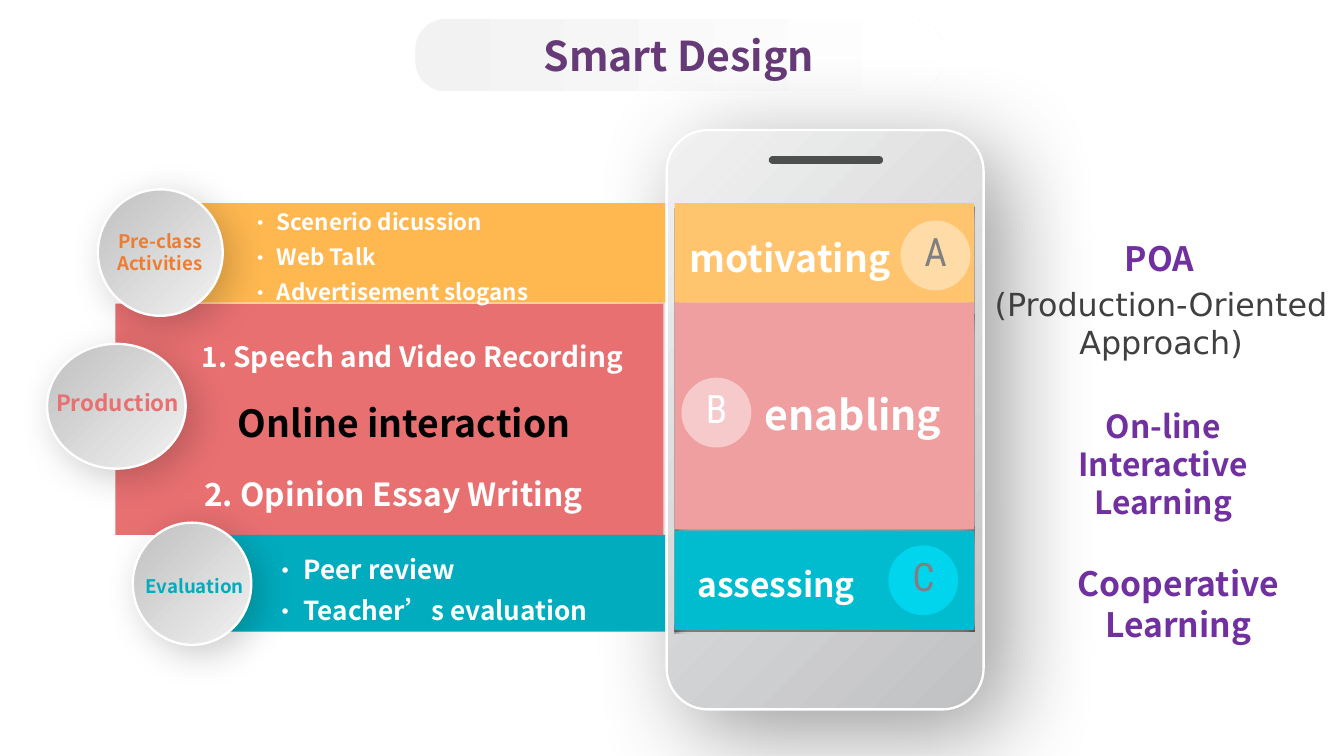
from lxml import etree
from pptx import Presentation
from pptx.dml.color import RGBColor
from pptx.enum.shapes import MSO_SHAPE
from pptx.enum.text import MSO_ANCHOR, MSO_AUTO_SIZE, PP_ALIGN
from pptx.oxml.ns import qn
from pptx.util import Cm, Pt

RECT, ROUND, OVAL = MSO_SHAPE.RECTANGLE, MSO_SHAPE.ROUNDED_RECTANGLE, MSO_SHAPE.OVAL
LEFT, CENTER, JUSTIFY = PP_ALIGN.LEFT, PP_ALIGN.CENTER, PP_ALIGN.JUSTIFY
MIDDLE, FIXED_SIZE = MSO_ANCHOR.MIDDLE, MSO_AUTO_SIZE.NONE
SANS, CONDENSED, PLAIN = "Noto Sans CJK SC", "Roboto Condensed", "DejaVu Sans"
COLORS = {
    "white": "FFFFFF", "black": "000000", "title": "663A77", "purple": "7030A0",
    "gray": "808080", "dark": "404040", "speaker": "4D4F4E", "pale": "F2F2F2",
    "silver": "BFBFBF", "phone light": "F1F1F1", "phone dark": "C0C1C3",
    "orange": "ED7D31", "yellow": "FFB850", "yellow panel": "FFC46D", "yellow badge": "FFDBA7",
    "red": "E87071", "red panel": "EF9F9F", "red badge": "F6CACA",
    "teal": "01ACBE", "teal panel": "01BBCF", "teal badge": "01D5ED",
}

deck = Presentation()
deck.slide_width, deck.slide_height = Cm(25.4), Cm(14.29)
page = deck.slides.add_slide(deck.slide_layouts[5])


def add_block(kind, box, fill, angle=0, line=False, shadow=None, corner=None):
    shape = page.shapes.add_shape(kind, *[Cm(value) for value in box])
    shape.shadow.inherit = False
    if corner is not None:
        shape.adjustments[0] = corner
    if isinstance(fill, str):
        shape.fill.solid()
        shape.fill.fore_color.rgb = RGBColor.from_string(COLORS[fill])
    else:
        shape.fill.background()
        properties = shape.element.spPr
        gradient = etree.Element(qn("a:gradFill"), rotWithShape="1")
        stops = etree.SubElement(gradient, qn("a:gsLst"))
        for position, color, alpha in fill:
            stop = etree.SubElement(stops, qn("a:gs"), pos=str(position * 1000))
            tone = etree.SubElement(stop, qn("a:srgbClr"), val=COLORS[color])
            etree.SubElement(tone, qn("a:alpha"), val=str(alpha * 1000))
        etree.SubElement(gradient, qn("a:lin"), ang=str(angle * 60000), scaled="0")
        properties.replace(properties.find(qn("a:noFill")), gradient)
    if line:
        shape.line.color.rgb = RGBColor.from_string(COLORS["white"])
        shape.line.width = Pt(1.25)
    else:
        shape.line.fill.background()
    if shadow:
        alpha, blur, distance = shadow
        effects = shape.element.spPr.find(qn("a:effectLst"))
        outer = etree.SubElement(effects, qn("a:outerShdw"), blurRad=str(Pt(blur)),
                                 dist=str(Pt(distance)), dir="2700000", algn="tl", rotWithShape="0")
        tone = etree.SubElement(outer, qn("a:srgbClr"), val=COLORS["black"])
        etree.SubElement(tone, qn("a:alpha"), val=str(alpha * 1000))
    return shape


def add_text(box, text, size, color, align=CENTER, font=SANS, spacing=None, indent=None, holder=None):
    holder = holder or page.shapes.add_textbox(0, 0, 0, 0)
    holder.left, holder.top, holder.width, holder.height = [Cm(value) for value in box]
    frame = holder.text_frame
    frame.text = text
    frame.word_wrap = True
    frame.auto_size = FIXED_SIZE
    for para in frame.paragraphs:
        para.alignment = align
        if spacing:
            para.line_spacing = spacing
        if indent:
            settings = para._p.get_or_add_pPr()
            settings.set("marL", str(Cm(indent)))
            settings.set("indent", str(-Cm(indent)))
            etree.SubElement(settings, qn("a:buFont"), typeface=font)
            etree.SubElement(settings, qn("a:buChar"), char="·")
        for span in para.runs:
            span.font.size = Pt(size)
            span.font.name = font
            span.font.bold = font == SANS
            span.font.color.rgb = RGBColor.from_string(COLORS[color])
            etree.SubElement(span._r.rPr, qn("a:ea"), typeface=font)


title_box = (7.85, 0.36, 9.96, 1.37)
pill = add_block(ROUND, title_box, [(0, "pale", 100), (99, "white", 100)], corner=0.42)
title = page.shapes.title
add_text(title_box, "Smart Design", 22, "title", holder=title)
title.text_frame.vertical_anchor = MIDDLE
title.element.addprevious(pill.element)

add_block(ROUND, (12.6, 2.46, 5.99, 10.95), [(0, "phone light", 100), (100, "phone dark", 100)],
          angle=45, line=True, shadow=(40, 54, 16), corner=0.13)
add_block(ROUND, (14.53, 2.95, 2.16, 0.15), "speaker", corner=0.5)

shades = [
    ((12.75, 3.94, 0.33, 8.03), 180, 34),
    ((18.08, 3.91, 0.33, 8.03), 0, 34),
    ((15.39, 1.3, 0.41, 5.66), 270, 34),
    ((15.29, 3.43, 0.61, 5.66), 270, 34),
    ((15.29, 7.42, 0.61, 5.66), 270, 34),
    ((15.42, 8.94, 0.33, 5.66), 90, 48),
]
for box, rotation, alpha in shades:
    shade = add_block(RECT, box, [(0, "pale", 0), (62, "black", 10), (100, "black", alpha)])
    shade.rotation = rotation

for top, height, color in [(3.84, 1.88, "yellow panel"), (5.72, 4.29, "red panel"),
                           (10.03, 1.88, "teal panel")]:
    add_block(RECT, (12.75, top, 5.66, height), color)

stages = [
    ((2.18, 5.74, 10.36, 4.37), "red", (0.89, 6.5, 2.62, 2.36),
     (0.74, 7.24, 2.97, 0.76), "Production", 12, "red"),
    ((3.63, 3.84, 8.94, 1.88), "yellow", (1.85, 3.58, 2.36, 2.39),
     (1.9, 4.22, 2.24, 1.12), "Pre-class Activities", 10, "orange"),
    ((4.14, 10.11, 8.43, 1.83), "teal", (2.51, 9.88, 2.24, 2.31),
     (2.46, 10.74, 2.44, 0.69), "Evaluation", 10, "teal"),
]
for bar, color, circle, label_box, label, size, label_color in stages:
    add_block(RECT, bar, color)
    add_block(OVAL, circle, [(0, "silver", 100), (100, "pale", 100)],
              angle=45, line=True, shadow=(20, 20, 6))
    add_text(label_box, label, size, label_color)

add_text((4.47, 3.66, 6.88, 2.26), "Scenerio dicussion\nWeb Talk\nAdvertisement slogans",
         12, "white", JUSTIFY, spacing=1.3, indent=0.51)
add_text((4.9, 10.16, 7.57, 1.8), "Peer review\nTeacher’s evaluation",
         14, "white", JUSTIFY, spacing=1.3, indent=0.59)
for box, text, size, color in [
    ((3.56, 6.1, 8.89, 1.02), "1. Speech and Video Recording", 15, "white"),
    ((4.24, 7.19, 7.9, 1.37), "Online interaction", 20, "black"),
    ((3.61, 8.64, 8.28, 1.19), "2. Opinion Essay Writing", 17, "white"),
]:
    add_text(box, text, size, color, JUSTIFY, spacing=1.3)

for left, top, color, letter, letter_color in [
    (17.02, 4.17, "yellow badge", "A", "gray"),
    (12.88, 7.14, "red badge", "B", "white"),
    (16.79, 10.31, "teal badge", "C", "gray"),
]:
    add_block(OVAL, (left, top, 1.32, 1.32), color)
    add_text((left + 0.17, top, 0.99, 1.14), letter, 21, letter_color, font=CONDENSED)

for box, text, size in [
    ((12.78, 4.32, 4.62, 1.12), "motivating", 20),
    ((14.2, 7.24, 4.04, 1.19), "enabling", 22),
    ((12.93, 10.54, 3.78, 1.02), "assessing", 18),
]:
    add_text(box, text, size, "white", LEFT)

for box, text, size, color, font in [
    ((19.82, 4.37, 4.19, 1.02), "POA", 18, "purple", SANS),
    ((18.34, 5.26, 7.21, 1.7), "(Production-Oriented Approach)", 17, "dark", PLAIN),
    ((19.89, 7.57, 4.19, 2.44), "On-line Interactive Learning", 17, "purple", SANS),
    ((20.02, 10.52, 4.5, 1.8), "Cooperative Learning", 18, "purple", SANS),
]:
    add_text(box, text, size, color, font=font)

deck.save("out.pptx")
